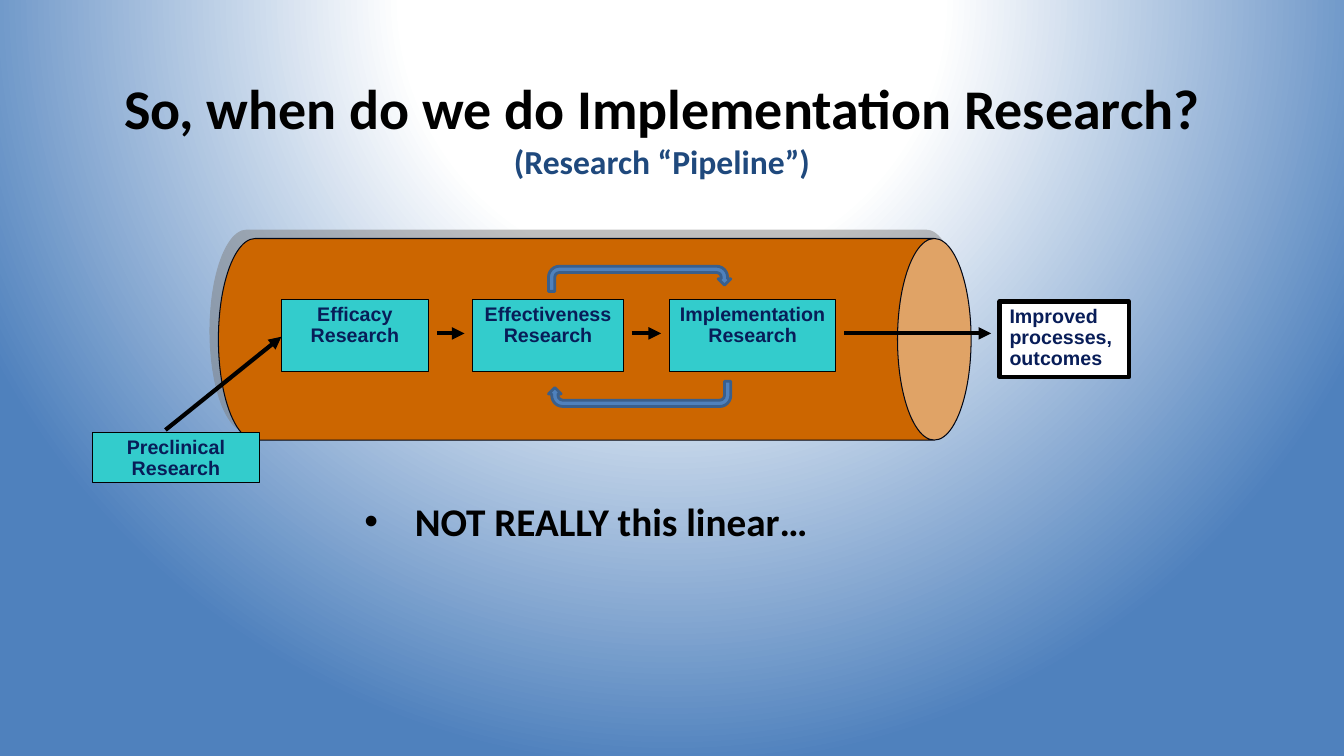
from lxml import etree
from pptx import Presentation
from pptx.dml.color import RGBColor
from pptx.enum.shapes import MSO_CONNECTOR, MSO_SHAPE
from pptx.enum.text import MSO_ANCHOR, MSO_AUTO_SIZE, PP_ALIGN
from pptx.oxml import parse_xml
from pptx.oxml.ns import nsdecls, qn
from pptx.util import Inches, Pt

BLACK = RGBColor(0x00, 0x00, 0x00)
WHITE = RGBColor(0xFF, 0xFF, 0xFF)
NAVY = RGBColor(0x08, 0x1D, 0x58)
INK = RGBColor(0x02, 0x07, 0x15)
TEAL = RGBColor(0x33, 0xCC, 0xCC)
ORANGE = RGBColor(0xCC, 0x66, 0x00)
GREY = RGBColor(0x80, 0x80, 0x80)
BLUE = RGBColor(0x4F, 0x81, 0xBD)
DARK_BLUE = RGBColor(0x1F, 0x49, 0x7D)
EDGE_BLUE = RGBColor(0x3A, 0x5F, 0x8C)

RECT, CAN, UTURN = MSO_SHAPE.RECTANGLE, MSO_SHAPE.CAN, MSO_SHAPE.U_TURN_ARROW
STRAIGHT = MSO_CONNECTOR.STRAIGHT
LEFT, CENTER = PP_ALIGN.LEFT, PP_ALIGN.CENTER
TOP, MIDDLE = MSO_ANCHOR.TOP, MSO_ANCHOR.MIDDLE
NO_FIT, GROW = MSO_AUTO_SIZE.NONE, MSO_AUTO_SIZE.SHAPE_TO_FIT_TEXT

COLUMNS = 160  # square grid cells across the slide
TITLE_ONLY = 5


class Deck:
    """Holds the slide, its grid and its text style."""

    def __init__(self):
        self.prs = Presentation()
        self.prs.slide_width, self.prs.slide_height = Inches(13.33), Inches(7.5)
        self.unit = self.prs.slide_width / COLUMNS
        self.s = self.prs.slides.add_slide(self.prs.slide_layouts[TITLE_ONLY])

    def grid(self, *cells):
        return [round(c * self.unit) for c in cells]

    def style(self, r, size, color, font):
        r.font.size, r.font.name, r.font.bold = Pt(size), font, True
        r.font.color.rgb = color

    def background(self, stops):
        gs = "".join(f'<a:gs pos="{pos * 1000}"><a:srgbClr val="{color}"/></a:gs>'
                     for pos, color in stops)
        bg = parse_xml(
            f'<p:bg {nsdecls("p", "a")}><p:bgPr><a:gradFill><a:gsLst>{gs}</a:gsLst>'
            '<a:path path="circle"><a:fillToRect l="50000" t="-80000" r="50000" b="180000"/>'
            '</a:path></a:gradFill><a:effectLst/></p:bgPr></p:bg>')
        self.s.element.cSld.insert(0, bg)

    def title(self, box, heading, subtitle):
        sp = self.s.shapes.title
        sp.left, sp.top, sp.width, sp.height = self.grid(*box)
        tf = sp.text_frame
        tf.text = f"{heading}\v{subtitle}"
        tf.auto_size, tf.vertical_anchor = NO_FIT, MIDDLE
        p = tf.paragraphs[0]
        p.alignment = CENTER
        for r, size, color in zip(p.runs, (40, 24), (BLACK, DARK_BLUE)):
            self.style(r, size, color, "Calibri")

    def shape(self, kind, box, fill, line, weight, rotation=0):
        sp = self.s.shapes.add_shape(kind, *self.grid(*box))
        sp.shadow.inherit = False
        sp.rotation = rotation
        sp.fill.solid()
        sp.fill.fore_color.rgb = fill
        sp.line.color.rgb = line
        sp.line.width = Pt(weight)
        return sp

    def pipe(self, box):
        sp = self.shape(CAN, box, ORANGE, INK, 0.75, rotation=90)
        sp.adjustments[0] = 0.365
        effects = sp._element.spPr.find(qn("a:effectLst"))
        shadow = etree.SubElement(effects, qn("a:outerShdw"), blurRad="0",
                                  dist=str(Pt(8.5)), dir=str(225 * 60000),
                                  algn="ctr", rotWithShape="0")
        color = etree.SubElement(shadow, qn("a:srgbClr"), val=str(GREY))
        etree.SubElement(color, qn("a:alpha"), val="50000")

    def box(self, box, text, fill=TEAL, weight=0.75, align=CENTER):
        tf = self.shape(RECT, box, fill, BLACK, weight).text_frame
        tf.text = text
        tf.word_wrap, tf.vertical_anchor = True, TOP
        for p in tf.paragraphs:
            p.alignment, p.line_spacing = align, 0.9
            self.style(p.runs[0], 14, NAVY, "Arial")

    def arrow(self, x1, y1, x2, y2):
        line = self.s.shapes.add_connector(STRAIGHT, *self.grid(x1, y1, x2, y2))
        line.line.color.rgb = BLACK
        line.line.width = Pt(3)
        etree.SubElement(line.line._ln, qn("a:tailEnd"), type="triangle")
        etree.SubElement(line._element.spPr, qn("a:effectLst"))

    def bullet(self, box, text):
        tf = self.s.shapes.add_textbox(*self.grid(*box)).text_frame
        tf.text = text
        tf.word_wrap, tf.auto_size = True, GROW
        p = tf.paragraphs[0]
        self.style(p.runs[0], 28, BLACK, "Calibri")
        pPr = p._p.get_or_add_pPr()
        pPr.set("marL", str(Inches(0.5)))
        pPr.set("indent", str(-Inches(0.5)))
        etree.SubElement(pPr, qn("a:buFont"), typeface="Arial")
        etree.SubElement(pPr, qn("a:buChar"), char="•")


def main():
    deck = Deck()
    deck.background([(0, WHITE), (35, WHITE), (100, BLUE)])
    deck.title((11, 9.6, 135.6, 11.2),
               "So, when do we do Implementation Research?", "(Research “Pipeline”)")
    deck.pipe((58.8, -4.4, 24, 89.6))

    # Stages inside the pipe, then the outcome at its end
    stages = [(33.5, 17.5, "Efficacy Research"),
              (56.3, 17.9, "Effectiveness Research"),
              (79.7, 19.8, "Implementation\nResearch")]
    for x, width, text in stages:
        deck.box((x, 35.7, width, 8.6), text)
    outcome_x = 119
    deck.box((outcome_x, 35.9, 15.4, 9), "Improved processes, outcomes", WHITE, 3, LEFT)

    # Arrows one cell clear of the boxes they join
    next_starts = [x for x, _, _ in stages[1:]] + [outcome_x]
    for (x, width, _), next_x in zip(stages, next_starts):
        deck.arrow(x + width + 1, 39.7, next_x - 1, 39.7)

    # Entry into the pipe
    deck.box((11, 51.5, 19.9, 6), "Preclinical Research")
    deck.arrow(19.7, 51.2, stages[0][0], 40.1)

    # Feedback loops
    for y, rotation in ((31.7, 0), (45.4, 180)):
        deck.shape(UTURN, (65.3, y, 21.7, 3), BLUE, EDGE_BLUE, 2, rotation)

    deck.bullet((42.2, 58.6, 59.6, 6.8), "NOT REALLY this linear…")
    deck.prs.save("out.pptx")


if __name__ == "__main__":
    main()
